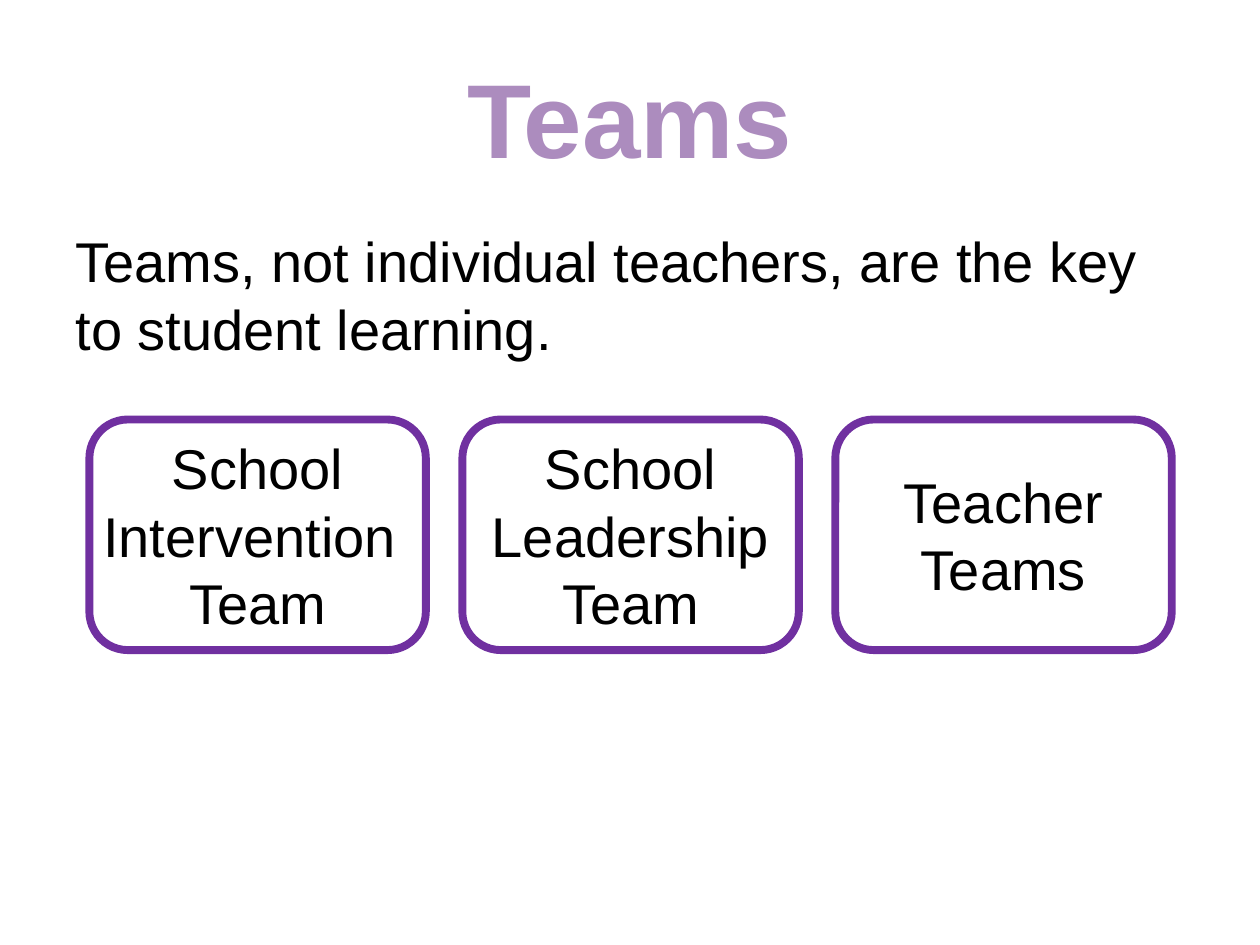
from dataclasses import dataclass

from lxml.etree import SubElement
from pptx import Presentation
from pptx.dml.color import RGBColor
from pptx.enum.shapes import MSO_SHAPE
from pptx.enum.text import MSO_ANCHOR, PP_ALIGN
from pptx.oxml.ns import qn
from pptx.util import Inches, Pt


@dataclass(frozen=True)
class Theme:
    """Colours, font and sizes of the slide."""
    font: str = "Arial"
    title_color: RGBColor = RGBColor(0xAC, 0x8C, 0xBE)
    text_color: RGBColor = RGBColor(0, 0, 0)
    outline_color: RGBColor = RGBColor(0x70, 0x30, 0xA0)
    title_size: Pt = Pt(60)
    text_size: Pt = Pt(32)
    outline_width: Pt = Pt(4.5)


THEME = Theme()
TEAMS = ["School Intervention \nTeam", "School Leadership\nTeam", "Teacher\nTeams"]


def place(shape, left, top, width, height):
    """Move and size a shape, in inches."""
    shape.left, shape.top = Inches(left), Inches(top)
    shape.width, shape.height = Inches(width), Inches(height)


def style_paragraph(paragraph, size, color, alignment, bold=False):
    """Set the font and alignment of a paragraph."""
    paragraph.alignment = alignment
    paragraph.font.name = THEME.font
    paragraph.font.size = size
    paragraph.font.bold = bold
    paragraph.font.color.rgb = color


def add_title(slide, text):
    """Fill the title placeholder."""
    title = slide.shapes.title
    place(title, 0.5, 0.3, 9, 1.25)
    title.text_frame.text = text
    style_paragraph(title.text_frame.paragraphs[0], THEME.title_size,
                    THEME.title_color, PP_ALIGN.CENTER, bold=True)


def add_statement(slide, text):
    """Fill the body placeholder with one paragraph without a bullet."""
    body = slide.placeholders[1]
    place(body, 0.5, 1.75, 9, 4.95)
    body.text_frame.text = text
    paragraph = body.text_frame.paragraphs[0]
    style_paragraph(paragraph, THEME.text_size, THEME.text_color, PP_ALIGN.LEFT)
    properties = paragraph._p.get_or_add_pPr()
    properties.set("marL", "0")
    properties.set("indent", "0")
    SubElement(properties, qn("a:buNone"))


def add_team_box(slide, text, left):
    """Add an outlined rounded box with a team name."""
    box = slide.shapes.add_shape(MSO_SHAPE.ROUNDED_RECTANGLE, Inches(left),
                                 Inches(3.33), Inches(2.67), Inches(1.83))
    box.shadow.inherit = False
    box.fill.background()
    box.line.color.rgb = THEME.outline_color
    box.line.width = THEME.outline_width
    frame = box.text_frame
    frame.word_wrap = True
    frame.vertical_anchor = MSO_ANCHOR.MIDDLE
    frame.margin_left = frame.margin_right = 0
    frame.margin_top = frame.margin_bottom = 0
    frame.text = text
    for paragraph in frame.paragraphs:
        style_paragraph(paragraph, THEME.text_size, THEME.text_color, PP_ALIGN.CENTER)


def main():
    """Build and save the slide."""
    presentation = Presentation()
    presentation.slide_width, presentation.slide_height = Inches(10), Inches(7.5)
    slide = presentation.slides.add_slide(presentation.slide_layouts[1])
    add_title(slide, "Teams")
    add_statement(slide, "Teams, not individual teachers, are the key to student learning.")
    for index, team in enumerate(TEAMS):
        add_team_box(slide, team, 0.71 + index * 2.96)
    presentation.save("out.pptx")


if __name__ == "__main__":
    main()
